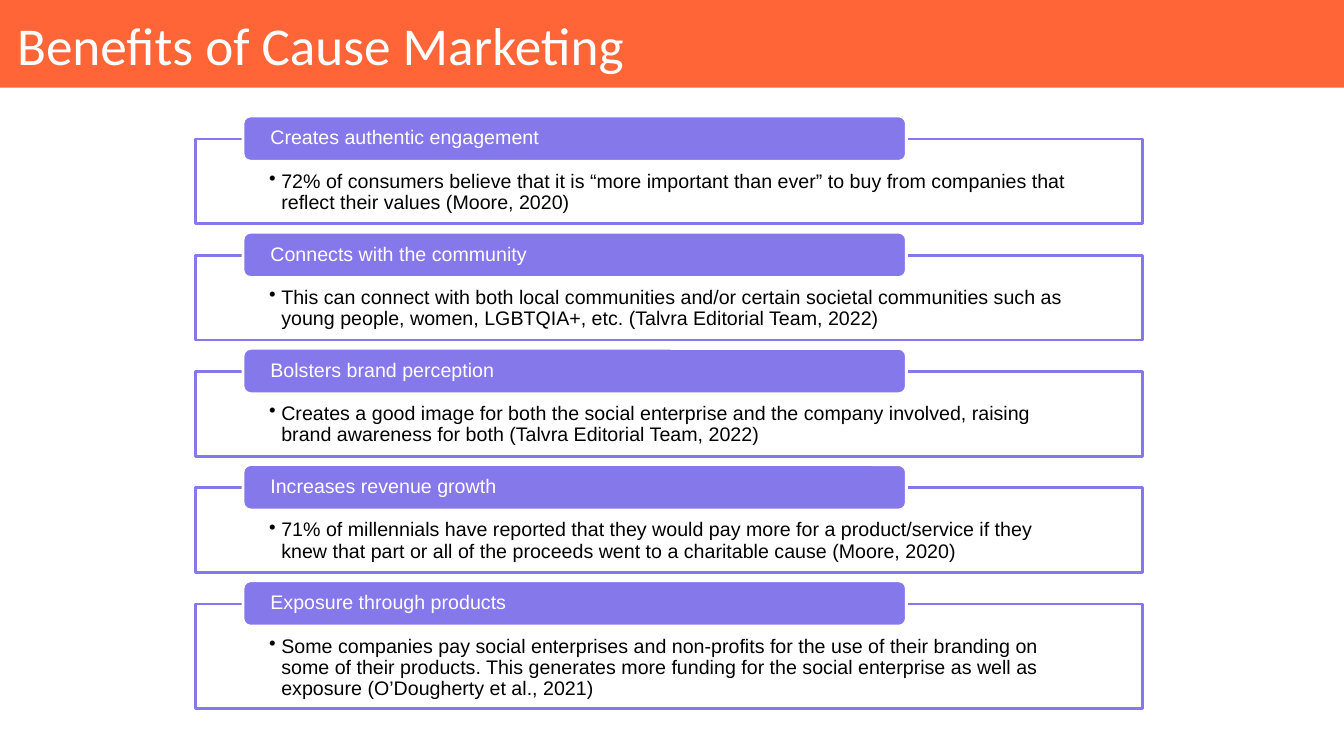
from lxml.etree import SubElement
from pptx import Presentation
from pptx.dml.color import RGBColor
from pptx.enum.shapes import MSO_SHAPE as Shape
from pptx.enum.text import MSO_ANCHOR as Anchor, MSO_AUTO_SIZE as AutoSize, PP_ALIGN as Align
from pptx.oxml.ns import qn
from pptx.util import Inches, Pt

COLORS = {"orange": "FF6537", "violet": "8578EA", "white": "FFFFFF", "black": "000000"}

BENEFITS = [
    ("Creates authentic engagement",
     "72% of consumers believe that it is “more important than ever” to buy from "
     "companies that reflect their values (Moore, 2020)"),
    ("Connects with the community",
     "This can connect with both local communities and/or certain societal communities "
     "such as young people, women, LGBTQIA+, etc. (Talvra Editorial Team, 2022)"),
    ("Bolsters brand perception",
     "Creates a good image for both the social enterprise and the company involved, "
     "raising brand awareness for both (Talvra Editorial Team, 2022)"),
    ("Increases revenue growth",
     "71% of millennials have reported that they would pay more for a product/service if "
     "they knew that part or all of the proceeds went to a charitable cause (Moore, 2020)"),
    ("Exposure through products",
     "Some companies pay social enterprises and non-profits for the use of their branding "
     "on some of their products. This generates more funding for the social enterprise as "
     "well as exposure (O’Dougherty et al., 2021)"),
]


def add_box(kind, left, top, width, height, fill, line=None):
    box = page.shapes.add_shape(kind, Inches(left), Inches(top), Inches(width), Inches(height))
    box.shadow.inherit = False
    box.fill.solid()
    box.fill.fore_color.rgb = RGBColor.from_string(COLORS[fill])
    if line:
        box.line.color.rgb = RGBColor.from_string(COLORS[line])
        box.line.width = Pt(2)
    else:
        box.line.fill.background()
    return box


def write(box, text, size, font, color, anchor, insets):
    """Fill the box with one left-aligned paragraph and return it; insets run left, top, right, bottom."""
    frame = box.text_frame
    settings = {"word_wrap": True, "auto_size": AutoSize.NONE, "vertical_anchor": anchor}
    for name, value in settings.items():
        setattr(frame, name, value)
    for side, inset in zip(("left", "top", "right", "bottom"), insets):
        setattr(frame, f"margin_{side}", Inches(inset))
    para = frame.paragraphs[0]
    para.alignment = Align.LEFT
    para.line_spacing = 0.9
    span = para.add_run()
    span.text = text
    span.font.size = Pt(size)
    span.font.name = font
    span.font.color.rgb = RGBColor.from_string(COLORS[color])
    return para


deck = Presentation()
deck.slide_width, deck.slide_height = Inches(13.33), Inches(7.5)
page = deck.slides.add_slide(deck.slide_layouts[5])

# Title on its band
title = page.shapes.title
band = add_box(Shape.RECTANGLE, 0, 0, 13.33, 0.87, "orange")
title.element.addprevious(band.element)
title_place = {"left": 0.11, "top": 0.09, "width": 13.06, "height": 0.78}
for name, value in title_place.items():
    setattr(title, name, Inches(value))
write(title, "Benefits of Cause Marketing", 38, "Calibri", "white", Anchor.MIDDLE, [0.06] * 4)

# Benefits: a framed detail with a heading tab over its top edge
for index, (heading, detail) in enumerate(BENEFITS):
    tab_top = 1.15 + 1.153 * index
    frame_height = 1.04 if index == len(BENEFITS) - 1 else 0.84

    frame_box = add_box(Shape.RECTANGLE, 1.94, tab_top + 0.23, 9.39, frame_height, "white", "violet")
    para = write(frame_box, detail, 14, "Arial", "black", Anchor.TOP, (0.73, 0.32, 0.73, 0.11))
    para.level = 1
    properties = para._p.get_or_add_pPr()
    properties.set("marL", str(Inches(0.12)))
    properties.set("indent", str(-Inches(0.12)))
    bullet_color = SubElement(properties, qn("a:buClr"))
    SubElement(bullet_color, qn("a:srgbClr"), val=COLORS["black"])
    SubElement(properties, qn("a:buChar"), char="•")

    tab = add_box(Shape.ROUNDED_RECTANGLE, 2.41, tab_top, 6.58, 0.45, "violet", "white")
    tab.adjustments[0] = 0.167
    write(tab, heading, 14, "Arial", "white", Anchor.MIDDLE, (0.25, 0, 0.25, 0))

deck.save("out.pptx")
